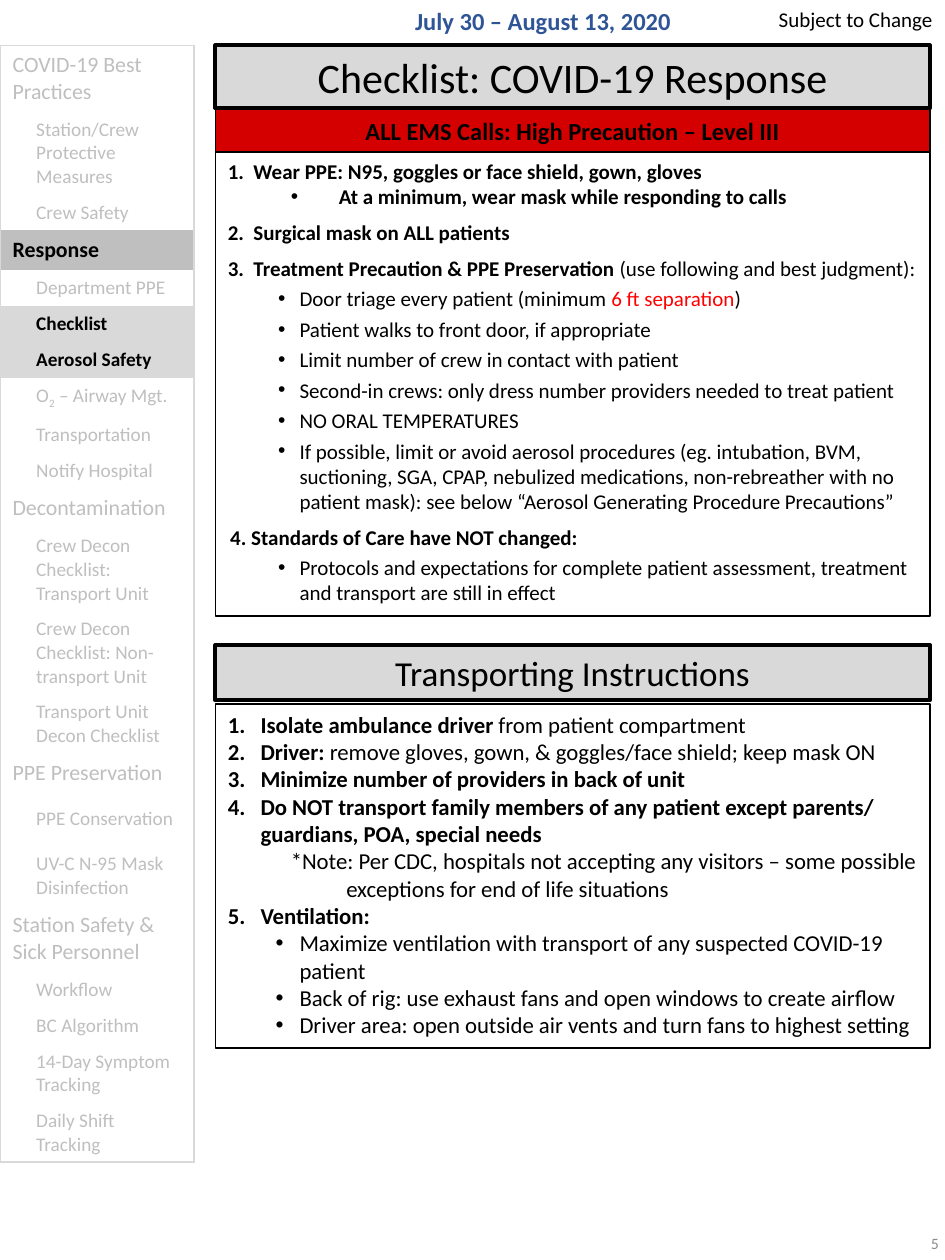
from lxml import etree
from pptx import Presentation
from pptx.dml.color import RGBColor
from pptx.enum import shapes, text
from pptx.oxml import ns
from pptx.util import Pt

BLACK = RGBColor(0x00, 0x00, 0x00)
RED = RGBColor(0xFF, 0x00, 0x00)
ALERT = RGBColor(0xD4, 0x00, 0x00)
BLUE = RGBColor(0x2F, 0x55, 0x97)
LIGHT = RGBColor(0xD9, 0xD9, 0xD9)
SILVER = RGBColor(0xBF, 0xBF, 0xBF)
GRAY = RGBColor(0x8C, 0x8C, 0x8C)

LEFT, WIDTH = 123.12, 408.24
BOLD = {"bold": True}
BULLET = {"level": 1, "margin": 41, "indent": -12.2, "before": 3, "bullet": "•"}
NUMBER = {"margin": 18.7, "indent": -18.7, "number": 1}
VENT = {"margin": 41, "indent": -13.7, "bullet": "•"}

CHECKLIST = [
    ([("1.  Wear PPE: N95, goggles or face shield, gown, gloves", BOLD)], {}),
    ([("At a minimum, wear mask while responding to calls", BOLD)],
     {"level": 1, "margin": 63.4, "indent": -27.4, "bullet": "•"}),
    ([("2.  Surgical mask on ALL patients", BOLD)],
     {"margin": 14.4, "indent": -14.4, "before": 6}),
    ([("3.  Treatment Precaution & PPE Preservation ", BOLD),
      ("(use following and best judgment):", {})],
     {"margin": 18, "indent": -18, "before": 6}),
    ([("Door triage every patient (minimum ", {}),
      ("6 ft separation", {"color": RED}), (")", {})], BULLET),
    ([("Patient walks to front door, if appropriate", {})], BULLET),
    ([("Limit number of crew in contact with patient", {})], BULLET),
    ([("Second-in crews: only dress number providers needed to treat patient", {})], BULLET),
    ([("NO ORAL TEMPERATURES", {})], BULLET),
    ([("If possible, limit or avoid aerosol procedures (eg. intubation, BVM, "
       "suctioning, SGA, CPAP, nebulized medications, non-rebreather with no "
       "patient mask): see below “Aerosol Generating Procedure Precautions”", {})], BULLET),
    ([("4. Standards of Care have NOT changed:", BOLD)],
     {"level": 1, "margin": 1.4, "before": 6}),
    ([("Protocols and expectations for complete patient assessment, treatment "
       "and transport are still in effect", {})], BULLET),
]

TRANSPORTING = [
    ([("Isolate ambulance driver ", BOLD), ("from patient compartment", {})], NUMBER),
    ([("Driver: ", BOLD),
      ("remove gloves, gown, & goggles/face shield; keep mask ON", {})], NUMBER),
    ([("Minimize number of providers in back of unit", BOLD)], NUMBER),
    ([("Do NOT transport family members of any patient except parents/ "
       "guardians, POA, special needs", BOLD)], NUMBER),
    ([("*Note: Per CDC, hospitals not accepting any visitors – some possible "
       "exceptions for end of life situations", {})],
     {"level": 1, "margin": 67.7, "indent": -31.7}),
    ([("Ventilation:", BOLD)], {**NUMBER, "number": 5}),
    ([("Maximize ventilation with transport of any suspected COVID-19 patient", {})], VENT),
    ([("Back of rig: use exhaust fans and open windows to create airflow", {})], VENT),
    ([("Driver area: open outside air vents and turn fans to highest setting", {})], VENT),
]

SECTION, TOPIC, CURRENT, SELECTED = "section", "topic", "current", "selected"
ROW_STYLES = {
    SECTION: (12.5, 0, SILVER, False, None),
    TOPIC: (11, 13.5, SILVER, False, None),
    CURRENT: (12.5, 0, BLACK, True, SILVER),
    SELECTED: (11, 13.5, BLACK, True, LIGHT),
}
MENU = [
    (SECTION, "COVID-19 Best Practices", 37.7),
    (TOPIC, "Station/Crew Protective Measures", 47.5),
    (TOPIC, "Crew Safety", 20.6),
    (CURRENT, "Response", 22.4),
    (TOPIC, "Department PPE", 20.6),
    (SELECTED, "Checklist", 20.6),
    (SELECTED, "Aerosol Safety", 20.6),
    (TOPIC, [("O", {}), ("2", {"baseline": -25000}), (" – Airway Mgt.", {})], 22.3),
    (TOPIC, "Transportation", 20.6),
    (TOPIC, "Notify Hospital", 20.6),
    (SECTION, "Decontamination", 22.4),
    (TOPIC, "Crew Decon Checklist: Transport Unit", 47.5),
    (TOPIC, "Crew Decon Checklist: Non-transport Unit", 47.5),
    (TOPIC, "Transport Unit Decon Checklist", 34),
    (SECTION, "PPE Preservation", 22.4),
    (TOPIC, "PPE Conservation", 30.4),
    (TOPIC, "UV-C N-95 Mask Disinfection", 34),
    (SECTION, "Station Safety & Sick Personnel", 37.7),
    (TOPIC, "Workflow", 20.6),
    (TOPIC, "BC Algorithm", 20.6),
    (TOPIC, "14-Day Symptom Tracking", 34),
    (TOPIC, "Daily Shift Tracking", 34),
]


def add_element(parent, tag, **attributes):
    """Append a DrawingML element to its parent."""
    element = etree.SubElement(parent, ns.qn(tag))
    for name, value in attributes.items():
        element.set(name, str(value))
    return element


def write_text(paragraph, runs, size=12, color=BLACK, bold=False, align=text.PP_ALIGN.LEFT,
               level=0, margin=0, indent=0, before=0, bullet=None, number=None):
    """Fill a paragraph with a string or with runs that carry their own format."""
    paragraph.alignment, paragraph.level = align, level
    properties = paragraph._p.get_or_add_pPr()
    properties.set("marL", str(Pt(margin)))
    properties.set("indent", str(Pt(indent)))
    if before:
        paragraph.space_before = Pt(before)
    if bullet:
        add_element(properties, "a:buFont", typeface="Arial")
        add_element(properties, "a:buChar", char=bullet)
    elif number:
        start = {"startAt": number} if number > 1 else {}
        add_element(properties, "a:buAutoNum", type="arabicPeriod", **start)
    else:
        add_element(properties, "a:buNone")
    for words, style in [(runs, {})] if isinstance(runs, str) else runs:
        run = paragraph.add_run()
        run.text = words
        run.font.name, run.font.size = "Calibri", Pt(size)
        run.font.bold = style.get("bold", bold)
        run.font.color.rgb = style.get("color", color)
        if "baseline" in style:
            run._r.get_or_add_rPr().set("baseline", str(style["baseline"]))


def add_label(slide, box, words, anchor=text.MSO_ANCHOR.TOP, **style):
    """Place a plain line of text."""
    frame = slide.shapes.add_textbox(*map(Pt, box)).text_frame
    frame.word_wrap, frame.vertical_anchor = True, anchor
    write_text(frame.paragraphs[0], words, **style)


def add_panel(slide, box, paragraphs, fill=None, line=1, **style):
    """Place an outlined rectangle that holds paragraphs."""
    shape = slide.shapes.add_shape(shapes.MSO_SHAPE.RECTANGLE, *map(Pt, box))
    shape.shadow.inherit = False
    if fill is None:
        shape.fill.background()
    else:
        shape.fill.solid()
        shape.fill.fore_color.rgb = fill
    shape.line.color.rgb, shape.line.width = BLACK, Pt(line)
    frame = shape.text_frame
    frame.word_wrap, frame.vertical_anchor = True, text.MSO_ANCHOR.TOP
    frame.auto_size = text.MSO_AUTO_SIZE.SHAPE_TO_FIT_TEXT
    for index, (runs, layout) in enumerate(paragraphs):
        paragraph = frame.add_paragraph() if index else frame.paragraphs[0]
        write_text(paragraph, runs, **style, **layout)


def add_heading(slide, box, words, **style):
    """Place a centred heading bar."""
    add_panel(slide, box, [(words, {})], align=text.PP_ALIGN.CENTER, **style)


def set_borders(cell, sides):
    """Draw the named sides of a cell and clear the others."""
    properties = cell._tc.get_or_add_tcPr()
    for side in "LRTB":
        line = add_element(properties, f"a:ln{side}", w=Pt(1))
        if side in sides:
            add_element(add_element(line, "a:solidFill"), "a:srgbClr", val=LIGHT)
        else:
            add_element(line, "a:noFill")


def add_menu(slide, box):
    """Place the sidebar menu as a one-column table."""
    table = slide.shapes.add_table(len(MENU), 1, *map(Pt, box)).table
    table.first_row = table.horz_banding = False
    for index, (kind, words, height) in enumerate(MENU):
        size, margin, color, bold, fill = ROW_STYLES[kind]
        table.rows[index].height = Pt(height)
        cell = table.cell(index, 0)
        cell.vertical_anchor = text.MSO_ANCHOR.MIDDLE
        top = "T" if index == 0 else ""
        bottom = "B" if index == len(MENU) - 1 else ""
        set_borders(cell, "LR" + top + bottom)
        if fill is None:
            cell.fill.background()
        else:
            cell.fill.solid()
            cell.fill.fore_color.rgb = fill
        write_text(cell.text_frame.paragraphs[0], words, size=size, color=color,
                   bold=bold, margin=margin)


def main():
    """Build the checklist slide and save it."""
    presentation = Presentation()
    presentation.slide_width, presentation.slide_height = Pt(540), Pt(720)
    slide = presentation.slides.add_slide(presentation.slide_layouts[6])
    add_label(slide, (421.9, 691.2, 121.7, 38.2), "5", anchor=text.MSO_ANCHOR.MIDDLE,
              size=9, color=GRAY, align=text.PP_ALIGN.RIGHT)
    add_heading(slide, (LEFT, 25.9, WIDTH, 36), "Checklist: COVID-19 Response",
                fill=LIGHT, line=2.25, size=24)
    add_panel(slide, (LEFT, 87.1, WIDTH, 265), CHECKLIST)
    add_heading(slide, (LEFT, 62.6, WIDTH, 24.5), "ALL EMS Calls: High Precaution – Level III",
                fill=ALERT, size=14, bold=True)
    add_label(slide, (215.3, 0, 190.1, 41), "July 30 – August 13, 2020",
              size=14, color=BLUE, bold=True, align=text.PP_ALIGN.CENTER)
    add_label(slide, (418.3, 0, 121.7, 21.6), "Subject to Change", align=text.PP_ALIGN.RIGHT)
    add_menu(slide, (0, 25.9, 110.9, 630.7))
    add_heading(slide, (LEFT, 368.6, WIDTH, 31.7), "Transporting Instructions",
                fill=LIGHT, line=2.25, size=20)
    add_panel(slide, (LEFT, 402.5, WIDTH, 196.6), TRANSPORTING, size=13)
    presentation.save("out.pptx")


if __name__ == "__main__":
    main()
